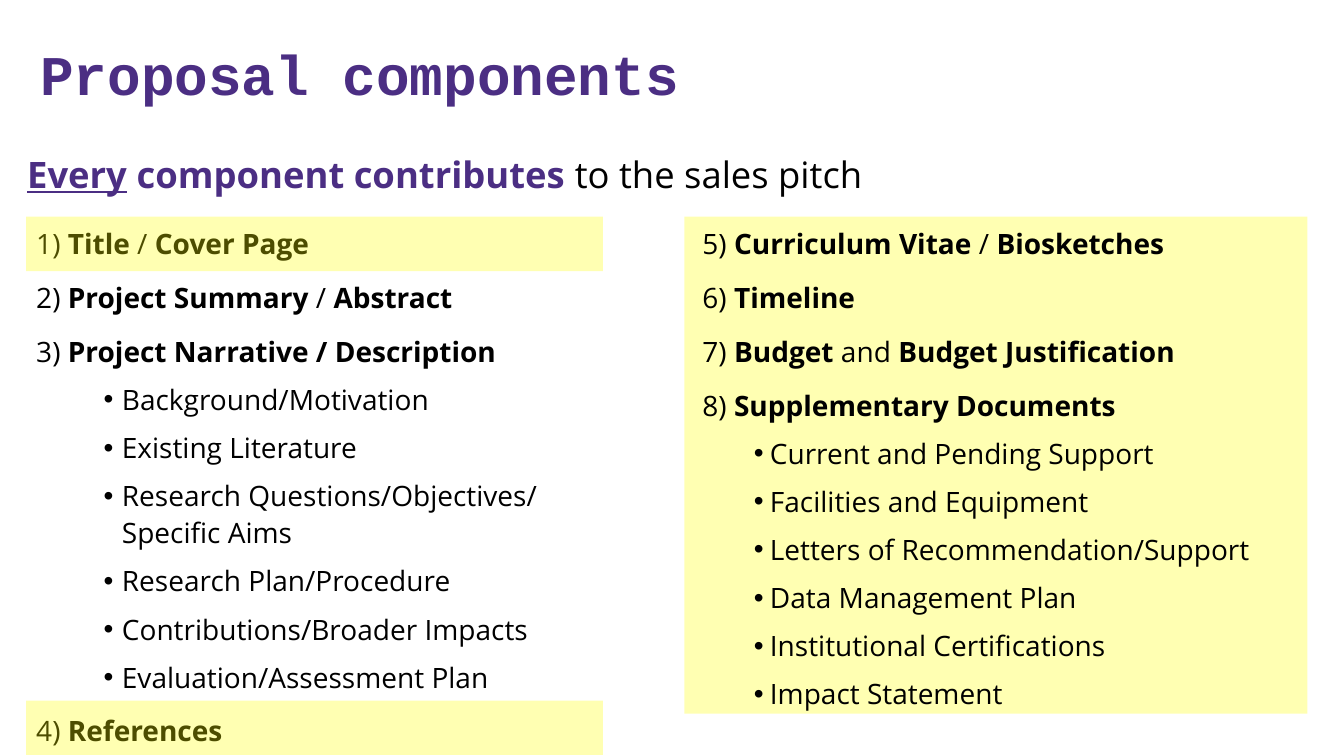
from lxml import etree
from pptx import Presentation
from pptx.dml.color import RGBColor
from pptx.enum.shapes import MSO_SHAPE
from pptx.enum.text import MSO_ANCHOR, MSO_AUTO_SIZE, PP_ALIGN
from pptx.oxml.ns import qn
from pptx.util import Pt

RECTANGLE = MSO_SHAPE.RECTANGLE
MIDDLE, TOP = MSO_ANCHOR.MIDDLE, MSO_ANCHOR.TOP
NO_AUTOFIT, FIT_SHAPE = MSO_AUTO_SIZE.NONE, MSO_AUTO_SIZE.SHAPE_TO_FIT_TEXT
LEFT = PP_ALIGN.LEFT

# Content: ** switches bold on and off
TITLE = "Proposal components"
LEAD = [("Every", True, True), (" component contributes ", True, False),
        ("to the sales pitch", False, False)]
LEFT_ITEMS = [
    ("1) **Title** / **Cover Page**", []),
    ("2) **Project Summary **/ **Abstract**", []),
    ("3) **Project Narrative / Description**", [
        "Background/Motivation",
        "Existing Literature",
        "Research Questions/Objectives/\nSpecific Aims",
        "Research Plan/Procedure",
        "Contributions/Broader Impacts",
        "Evaluation/Assessment Plan",
    ]),
    ("4) **References**", []),
]
RIGHT_ITEMS = [
    ("5) **Curriculum Vitae **/ **Biosketches**", []),
    ("6) **Timeline**", []),
    ("7) **Budget** and **Budget Justification**", []),
    ("8) **Supplementary Documents**", [
        "Current and Pending Support",
        "Facilities and Equipment",
        "Letters of Recommendation/Support",
        "Data Management Plan",
        "Institutional Certifications",
        "Impact Statement",
    ]),
]

# Style and layout, in points
COLORS = {"purple": "4B2E83", "black": "000000", "highlight": "FFFF00"}
TITLE_FONT, BODY_FONT = "Courier New", "Open Sans"
HIGHLIGHT_ALPHA = 30000
ITEM_INDENT = 23.8
TITLE_BOX = (0, 0, 960, 104.4)
LEAD_BOX = (0, 103.7, 960, 41)
LEFT_BOX = (-5, 156.2, 476, 384)
RIGHT_BOX = (470.9, 156.2, 484, 354)
LEFT_HIGHLIGHTS = [(18.7, top, 412, 38.9) for top in (154.8, 500.4)]
RIGHT_HIGHLIGHT = (488.9, 154.8, 445, 355)


def color(name):
    return RGBColor.from_string(COLORS[name])


def set_font(font, name, size, color_name):
    font.name = name
    font.size = Pt(size)
    font.color.rgb = color(color_name)


def set_margins(frame, left, top, right, bottom):
    frame.margin_left, frame.margin_top = Pt(left), Pt(top)
    frame.margin_right, frame.margin_bottom = Pt(right), Pt(bottom)


def add_text_box(slide, box):
    frame = slide.shapes.add_textbox(*map(Pt, box)).text_frame
    frame.word_wrap = True
    frame.auto_size = FIT_SHAPE
    return frame


def add_highlight(slide, box):
    shape = slide.shapes.add_shape(RECTANGLE, *map(Pt, box))
    shape.shadow.inherit = False
    shape.line.fill.background()
    shape.fill.solid()
    shape.fill.fore_color.rgb = color("highlight")
    fill_color = shape.fill._xPr.find(".//" + qn("a:srgbClr"))
    etree.SubElement(fill_color, qn("a:alpha"), val=str(HIGHLIGHT_ALPHA))


def write_paragraph(frame, text, first, space, left, hanging=0):
    paragraph = frame.paragraphs[0] if first else frame.add_paragraph()
    paragraph.line_spacing = 1.1
    paragraph.space_before = Pt(0 if first else space)
    properties = paragraph._p.get_or_add_pPr()
    properties.set("marL", str(Pt(left)))
    properties.set("indent", str(-Pt(hanging)))
    if hanging:
        etree.SubElement(properties, qn("a:buFont"), typeface="Arial")
        etree.SubElement(properties, qn("a:buChar"), char="•")
    set_font(paragraph.font, BODY_FONT, 20, "black")
    for line_number, line in enumerate(text.split("\n")):
        if line_number:
            paragraph.add_line_break()
        for part_number, part in enumerate(line.split("**")):
            if part:
                run = paragraph.add_run()
                run.text = part
                run.font.bold = part_number % 2 == 1


def add_column(slide, box, items, bullet_left, bullet_hanging):
    frame = add_text_box(slide, box)
    for number, (heading, bullets) in enumerate(items):
        write_paragraph(frame, heading, number == 0, 12, ITEM_INDENT)
        for bullet in bullets:
            write_paragraph(frame, bullet, False, 8, bullet_left, bullet_hanging)


def add_title(slide):
    title = slide.shapes.title
    title.left, title.top, title.width, title.height = map(Pt, TITLE_BOX)
    frame = title.text_frame
    frame.text = TITLE
    frame.word_wrap = True
    frame.auto_size = NO_AUTOFIT
    frame.vertical_anchor = MIDDLE
    set_margins(frame, 28.8, 36, 7.2, 36)
    paragraph = frame.paragraphs[0]
    paragraph.alignment = LEFT
    set_font(paragraph.font, TITLE_FONT, 40, "purple")
    paragraph.font.bold = True


def add_lead(slide):
    frame = add_text_box(slide, LEAD_BOX)
    frame.vertical_anchor = TOP
    set_margins(frame, 19.4, 5, 9.4, 5)
    paragraph = frame.paragraphs[0]
    set_font(paragraph.font, BODY_FONT, 26, "black")
    for text, strong, underlined in LEAD:
        run = paragraph.add_run()
        run.text = text
        run.font.bold = strong
        run.font.underline = underlined
        run.font.color.rgb = color("purple" if strong else "black")


def main():
    presentation = Presentation()
    presentation.slide_width, presentation.slide_height = Pt(960), Pt(540)
    slide = presentation.slides.add_slide(presentation.slide_layouts[5])

    add_title(slide)
    # The left highlights tint the text; the right one lies behind it
    add_column(slide, LEFT_BOX, LEFT_ITEMS, 85, 13)
    for box in LEFT_HIGHLIGHTS + [RIGHT_HIGHLIGHT]:
        add_highlight(slide, box)
    add_lead(slide)
    add_column(slide, RIGHT_BOX, RIGHT_ITEMS, 72, 11.5)

    presentation.save("out.pptx")


if __name__ == "__main__":
    main()
